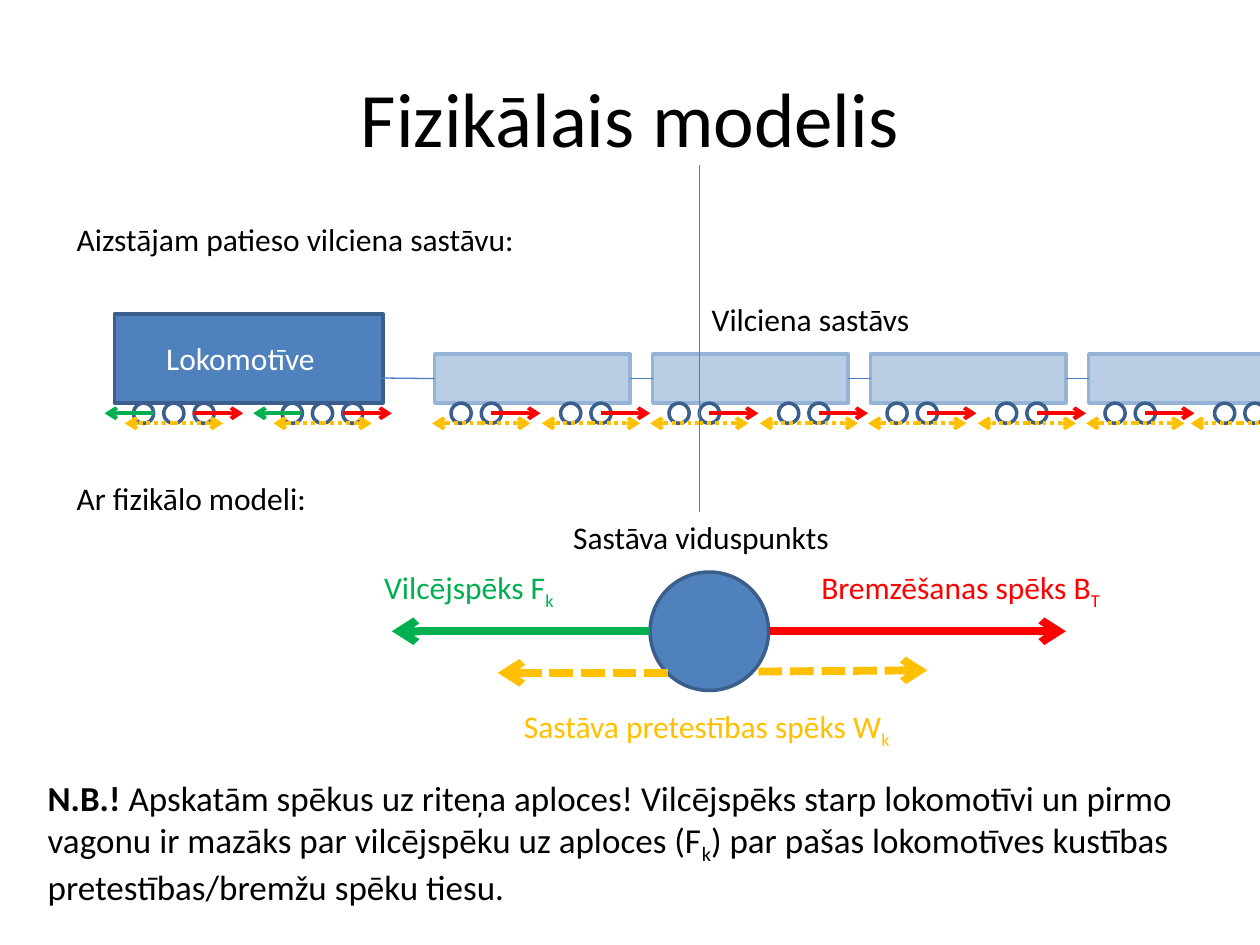
import pptx
import pptx.dml.color
import pptx.enum.dml
import pptx.enum.shapes
import pptx.enum.text
import pptx.oxml.ns
import pptx.util
from lxml import etree

Inches = pptx.util.Inches
MSO_SHAPE = pptx.enum.shapes.MSO_SHAPE
DASH = pptx.enum.dml.MSO_LINE

BLACK, WHITE = "000000", "FFFFFF"
BLUE, DARK_BLUE, COUPLING_BLUE = "4F81BD", "3A5F8C", "4B7EBC"
WAGON_FILL, WAGON_EDGE = "B9CDE5", "95B3D7"
TRACTION, BRAKING, RESISTANCE = "00B050", "FF0000", "FFC000"

WHEEL = 0.16
WHEEL_TOP = 3.2
AXLE_Y = 3.28
RAIL_Y = 3.36
FORCE_LENGTH = 0.39
WAGON_LEFTS = [3.45 + 1.73 * i for i in range(4)]


def color(hex_code):
    return pptx.dml.color.RGBColor.from_string(hex_code)


def write_runs(paragraph, runs, size, hex_code):
    """Write (text, extra) pairs; extra is 'bold', 'sub' or None."""
    for text, extra in runs:
        run = paragraph.add_run()
        run.text = text
        font_format = {
            "name": "Calibri",
            "size": pptx.util.Pt(size),
            "bold": extra == "bold",
        }
        for key, value in font_format.items():
            setattr(run.font, key, value)
        run.font.color.rgb = color(hex_code)
        if extra == "sub":
            run._r.get_or_add_rPr().set("baseline", "-25000")


def add_label(shapes, box, runs, hex_code=BLACK, size=18):
    frame = shapes.add_textbox(*map(Inches, box)).text_frame
    frame_format = {
        "word_wrap": True,
        "auto_size": pptx.enum.text.MSO_AUTO_SIZE.SHAPE_TO_FIT_TEXT,
    }
    for key, value in frame_format.items():
        setattr(frame, key, value)
    write_runs(frame.paragraphs[0], runs, size, hex_code)


def add_body(shapes, preset, box, fill, edge):
    body = shapes.add_shape(preset, *map(Inches, box))
    body.shadow.inherit = False
    body.fill.solid()
    body.fill.fore_color.rgb = color(fill)
    body.line.color.rgb = color(edge)
    body.line.width = pptx.util.Pt(2)
    return body


def add_line(shapes, start, end, hex_code=COUPLING_BLUE, width=0.75,
             dash=None, arrow=False):
    line = shapes.add_connector(pptx.enum.shapes.MSO_CONNECTOR.STRAIGHT,
                                *map(Inches, start + end))
    line.line.color.rgb = color(hex_code)
    line.line.width = pptx.util.Pt(width)
    if dash:
        line.line.dash_style = dash
    if arrow:
        etree.SubElement(line.line._get_or_add_ln(),
                         pptx.oxml.ns.qn("a:tailEnd"), type="arrow")
    etree.SubElement(line._element.spPr, pptx.oxml.ns.qn("a:effectLst"))
    return line


def add_force(shapes, x, direction, hex_code, y=AXLE_Y, dash=None):
    add_line(shapes, (x, y), (x + direction * FORCE_LENGTH, y),
             hex_code, 2.25, dash, True)


def add_resistance(shapes, x):
    for direction in (1, -1):
        add_force(shapes, x, direction, RESISTANCE, RAIL_Y, DASH.ROUND_DOT)


def add_wheels(shapes, lefts):
    for left in lefts:
        add_body(shapes, MSO_SHAPE.OVAL, (left, WHEEL_TOP, WHEEL, WHEEL),
                 WHITE, DARK_BLUE)


def add_train(shapes):
    # Locomotive with two three-axle bogies
    bogies = (1.06, 2.24)
    add_body(shapes, MSO_SHAPE.RECTANGLE, (0.91, 2.49, 2.13, 0.71),
             BLUE, DARK_BLUE)
    for bogie in bogies:
        add_wheels(shapes, [bogie + 0.24 * i for i in range(3)])

    # Wagons, each coupled to the vehicle in front
    previous = None
    for left in WAGON_LEFTS:
        group = shapes.add_group_shape().shapes
        wagon = add_body(group, MSO_SHAPE.RECTANGLE, (left, 2.81, 1.55, 0.39),
                         WAGON_FILL, WAGON_EDGE)
        add_wheels(group, [left + dx for dx in (0.13, 0.37, 1.0, 1.24)])
        coupling = add_line(shapes, (left, 3), (3.03, 3))
        coupling.begin_connect(wagon, 1)
        if previous:
            coupling.end_connect(previous, 3)
        previous = wagon

    add_label(shapes, (1.22, 2.64, 1.57, 0.4), [("Lokomotīve", None)], WHITE)
    add_label(shapes, (5.55, 2.33, 3.07, 0.4), [("Vilciena sastāvs", None)])

    # Forces at the locomotive wheels
    for bogie in bogies:
        add_force(shapes, bogie + WHEEL, -1, TRACTION)
        add_force(shapes, bogie + 0.48, 1, BRAKING)
        add_resistance(shapes, bogie + 0.32)

    # Forces at the wagon wheels; the last bogie runs off the slide
    for left in WAGON_LEFTS:
        for offset in (0, 0.87):
            brake_x = left + 0.45 + offset
            if brake_x < 9.5:
                add_force(shapes, brake_x, 1, BRAKING)
            add_resistance(shapes, min(left + 0.37 + offset, 9.84))


def add_model(shapes):
    # Midpoint of the train as a single body
    add_line(shapes, (5.55, 1.31), (5.55, 4.06))
    add_label(shapes, (4.45, 4.06, 3.15, 0.4), [("Sastāva viduspunkts", None)])
    add_body(shapes, MSO_SHAPE.OVAL, (5.16, 4.54, 0.94, 0.94), BLUE, DARK_BLUE)

    # Resulting forces
    for start, end, hex_code, dash in (
        ((5.16, 5.01), (3.11, 5.01), TRACTION, None),
        ((6.1, 5.01), (8.46, 5.01), BRAKING, None),
        ((5.3, 5.34), (3.95, 5.34), RESISTANCE, DASH.SQUARE_DOT),
        ((6.02, 5.33), (7.36, 5.32), RESISTANCE, DASH.SQUARE_DOT),
    ):
        add_line(shapes, start, end, hex_code, 4.5, dash, True)

    # Force names with their subscripts
    for box, name, index, hex_code in (
        ((2.95, 4.46, 2.2, 0.4), "Vilcējspēks F", "k", TRACTION),
        ((6.42, 4.46, 2.76, 0.4), "Bremzēšanas spēks B", "T", BRAKING),
        ((4.06, 5.56, 3.31, 0.4), "Sastāva pretestības spēks W", "k",
         RESISTANCE),
    ):
        add_label(shapes, box, [(name, None), (index, "sub")], hex_code)
    add_label(shapes, (0.51, 3.75, 4.02, 0.4), [("Ar fizikālo modeli:", None)])


def add_title(title):
    frame = {"left": 0.5, "top": 0.3, "width": 9, "height": 1.25}
    for key, value in frame.items():
        setattr(title, key, Inches(value))
    title.text_frame.vertical_anchor = pptx.enum.text.MSO_ANCHOR.MIDDLE
    heading = title.text_frame.paragraphs[0]
    heading.alignment = pptx.enum.text.PP_ALIGN.CENTER
    write_runs(heading, [("Fizikālais modelis", None)], 44, BLACK)


def main():
    deck = pptx.Presentation()
    deck.slide_width, deck.slide_height = Inches(10), Inches(7.5)
    shapes = deck.slides.add_slide(deck.slide_layouts[5]).shapes

    add_title(shapes.title)
    add_train(shapes)
    add_label(shapes, (0.51, 1.7, 4.02, 0.4),
              [("Aizstājam patieso vilciena sastāvu:", None)])
    add_model(shapes.add_group_shape().shapes)

    # Closing remark
    add_label(shapes, (0.28, 6.11, 9.45, 1.11), [
        ("N.B.! ", "bold"),
        ("Apskatām spēkus uz riteņa aploces! Vilcējspēks starp lokomotīvi un "
         "pirmo vagonu ir mazāks par vilcējspēku uz aploces (F", None),
        ("k", "sub"),
        (") par pašas lokomotīves kustības pretestības/bremžu spēku tiesu.",
         None),
    ], size=20)
    deck.save("out.pptx")


if __name__ == "__main__":
    main()
